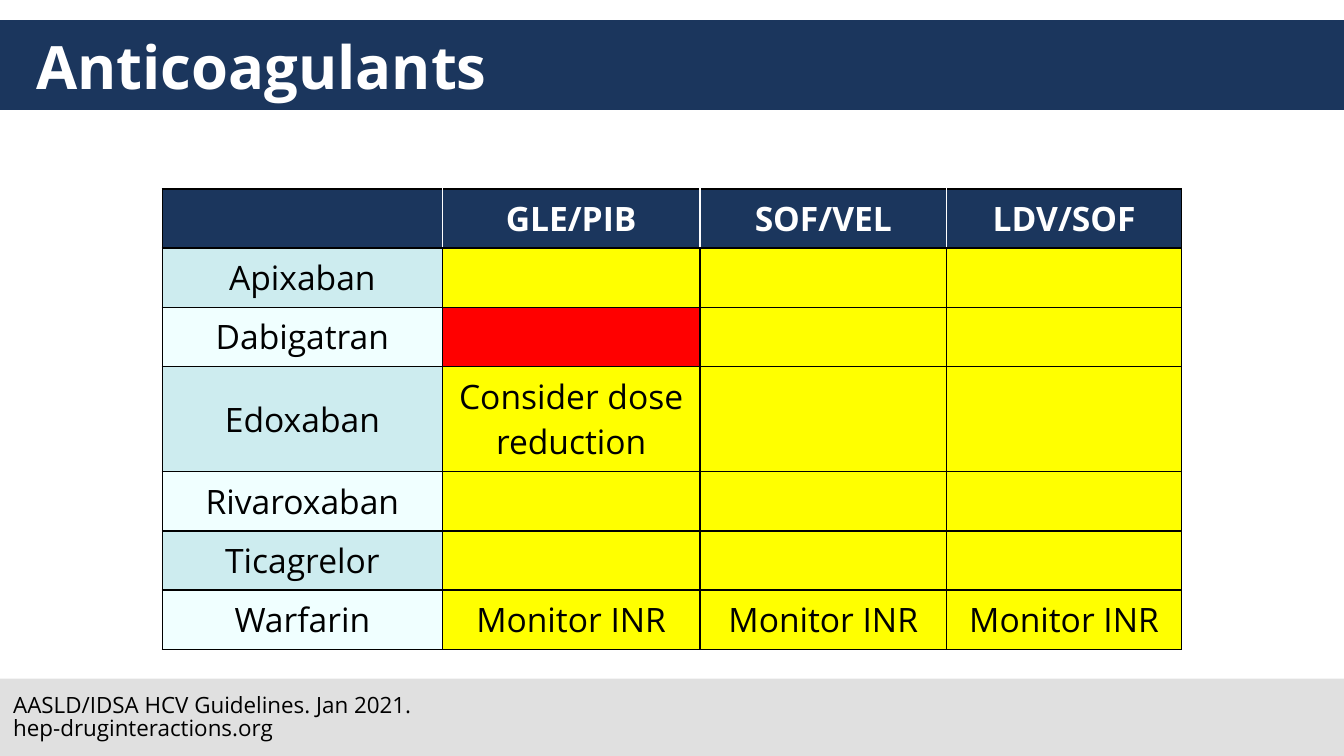
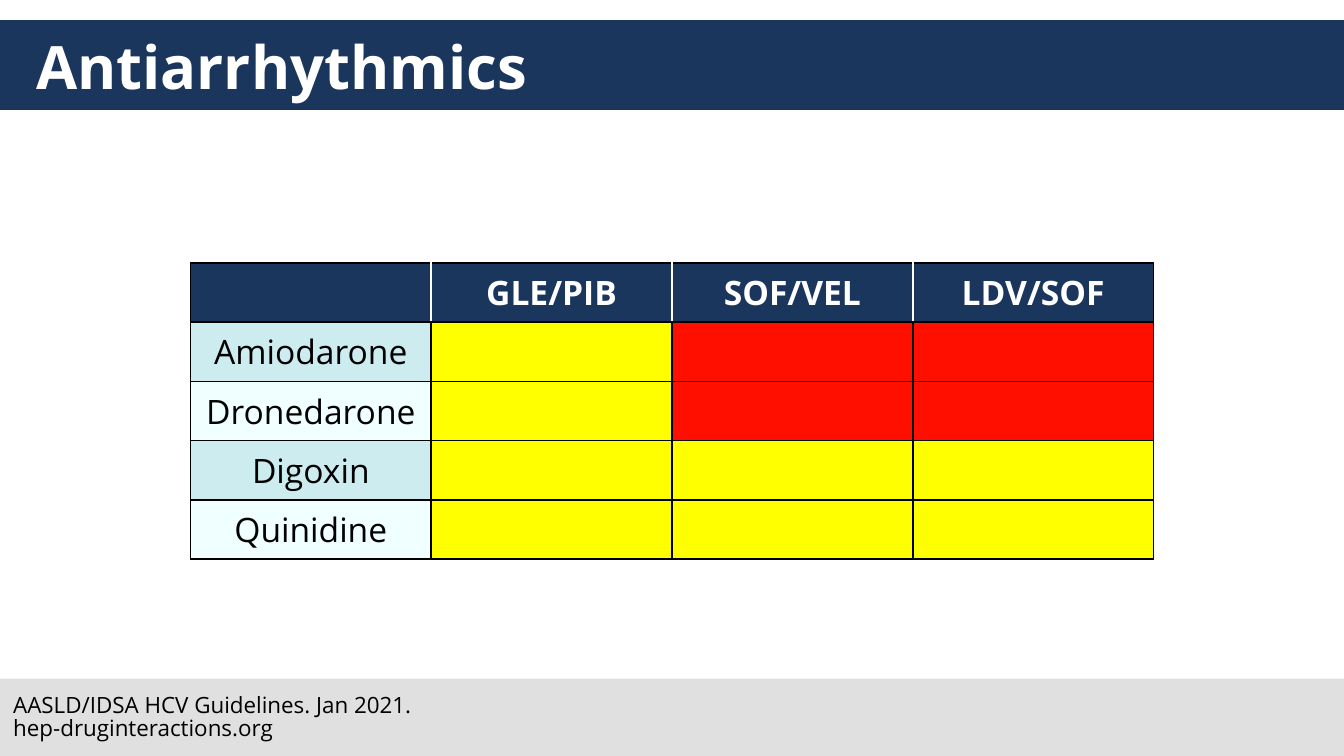
from lxml.etree import SubElement
from pptx import Presentation
from pptx.dml.color import RGBColor
from pptx.enum.shapes import MSO_SHAPE
from pptx.enum.text import MSO_ANCHOR, MSO_AUTO_SIZE, PP_ALIGN
from pptx.oxml.ns import qn
from pptx.util import Cm, Pt

NAVY = RGBColor(0x1B, 0x36, 0x5D)
GRAY = RGBColor(0xE0, 0xE0, 0xE0)
WHITE = RGBColor(0xFF, 0xFF, 0xFF)
BLACK = RGBColor(0x00, 0x00, 0x00)
AQUA = RGBColor(0xCD, 0xEC, 0xEF)
PALE_AQUA = RGBColor(0xF0, 0xFF, 0xFF)
YELLOW = RGBColor(0xFF, 0xFF, 0x00)
RED = RGBColor(0xFF, 0x00, 0x00)
ORANGE_RED = RGBColor(0xFF, 0x0F, 0x00)

FONT = "Open Sans"
WIDTH, HEIGHT = Cm(25.4), Cm(14.29)
ROW_HEIGHT = Cm(1.12)
REGIMENS = ["GLE/PIB", "SOF/VEL", "LDV/SOF"]
SOURCES = ["AASLD/IDSA HCV Guidelines. Jan 2021.", "hep-druginteractions.org"]


class InteractionDeck:
    def __init__(self):
        self.presentation = Presentation()
        self.presentation.slide_width = WIDTH
        self.presentation.slide_height = HEIGHT
        self.slide = None

    def start_slide(self, title):
        layout = self.presentation.slide_layouts.get_by_name("Title Only")
        self.slide = self.presentation.slides.add_slide(layout)
        self.band(Cm(0.38), Cm(1.7), NAVY)
        self.band(Cm(12.83), HEIGHT - Cm(12.83), GRAY)
        self.title(title)

    def style(self, paragraph, size, color, bold=False, align=PP_ALIGN.LEFT):
        paragraph.alignment = align
        font = paragraph.font
        font.name, font.size, font.bold = FONT, Pt(size), bold
        font.color.rgb = color

    def band(self, top, height, color):
        band = self.slide.shapes.add_shape(MSO_SHAPE.RECTANGLE, 0, top, WIDTH, height)
        band.shadow.inherit = False
        band.fill.solid()
        band.fill.fore_color.rgb = color
        band.line.fill.background()

    def title(self, text):
        title = self.slide.shapes.title
        title.left, title.top = Cm(0.43), Cm(0.38)
        title.width, title.height = Cm(24.56), Cm(1.73)
        frame = title.text_frame
        frame.text = text
        frame.auto_size = MSO_AUTO_SIZE.NONE
        frame.vertical_anchor = MSO_ANCHOR.MIDDLE
        self.style(frame.paragraphs[0], 32, WHITE, bold=True)
        # Bring the title in front of its band
        title.element.getparent().append(title.element)

    def sources(self, lines):
        box = self.slide.shapes.add_textbox(0, Cm(13), Cm(9.32), Cm(1.27))
        frame = box.text_frame
        frame.word_wrap = True
        frame.auto_size = MSO_AUTO_SIZE.SHAPE_TO_FIT_TEXT
        frame.text = "\n".join(lines)
        for paragraph in frame.paragraphs:
            paragraph.line_spacing = 0.87
            self.style(paragraph, 12, BLACK)

    def borders(self, cell, left, right):
        properties = cell._tc.get_or_add_tcPr()
        sides = {"a:lnL": left, "a:lnR": right, "a:lnT": BLACK, "a:lnB": BLACK}
        for tag, color in sides.items():
            line = SubElement(properties, qn(tag), w=str(Pt(1)))
            fill = SubElement(line, qn("a:solidFill"))
            SubElement(fill, qn("a:srgbClr"), val=str(color))

    def cell(self, cell, text, fill, color=BLACK, bold=False, left=BLACK, right=BLACK):
        self.borders(cell, left, right)
        cell.fill.solid()
        cell.fill.fore_color.rgb = fill
        cell.vertical_anchor = MSO_ANCHOR.MIDDLE
        cell.text = text
        self.style(cell.text_frame.paragraphs[0], 18, color, bold, PP_ALIGN.CENTER)

    def drug_table(self, top, widths, drugs, notes, warnings, warning_color, heights):
        """Notes map (drug, regimen) to text; warnings list such pairs."""
        total = sum(widths)
        row_heights = [ROW_HEIGHT] + [heights.get(drug, ROW_HEIGHT) for drug in drugs]
        table = self.slide.shapes.add_table(
            len(drugs) + 1, len(widths), (WIDTH - total) // 2, top, total, sum(row_heights)
        ).table
        for column, width in zip(table.columns, widths):
            column.width = width
        for row, height in zip(table.rows, row_heights):
            row.height = height

        # Header row, with white lines between its cells
        last = len(REGIMENS)
        for index, text in enumerate(["", *REGIMENS]):
            self.cell(table.cell(0, index), text, NAVY, WHITE, bold=True,
                      left=WHITE if index > 0 else BLACK,
                      right=WHITE if index < last else BLACK)

        # One row for each drug
        for row, drug in enumerate(drugs, start=1):
            self.cell(table.cell(row, 0), drug, AQUA if row % 2 else PALE_AQUA)
            for column, regimen in enumerate(REGIMENS, start=1):
                pair = (drug, regimen)
                fill = warning_color if pair in warnings else YELLOW
                self.cell(table.cell(row, column), notes.get(pair, ""), fill)


def main():
    deck = InteractionDeck()

    # Anticoagulants
    deck.start_slide("Anticoagulants")
    notes = {("Warfarin", regimen): "Monitor INR" for regimen in REGIMENS}
    notes["Edoxaban", "GLE/PIB"] = "Consider dose reduction"
    deck.drug_table(
        Cm(3.57), [Cm(5.29), Cm(4.87), Cm(4.66), Cm(4.44)],
        ["Apixaban", "Dabigatran", "Edoxaban", "Rivaroxaban", "Ticagrelor", "Warfarin"],
        notes, [("Dabigatran", "GLE/PIB")], RED, {"Edoxaban": Cm(1.98)},
    )
    deck.sources(SOURCES)

    # Antiarrhythmics
    deck.start_slide("Antiarrhythmics")
    warnings = [(drug, regimen) for drug in ("Amiodarone", "Dronedarone")
                for regimen in ("SOF/VEL", "LDV/SOF")]
    deck.drug_table(
        Cm(4.97), [Cm(4.55)] * 4,
        ["Amiodarone", "Dronedarone", "Digoxin", "Quinidine"],
        {}, warnings, ORANGE_RED, {},
    )
    deck.sources(SOURCES)

    deck.presentation.save("out.pptx")


if __name__ == "__main__":
    main()
